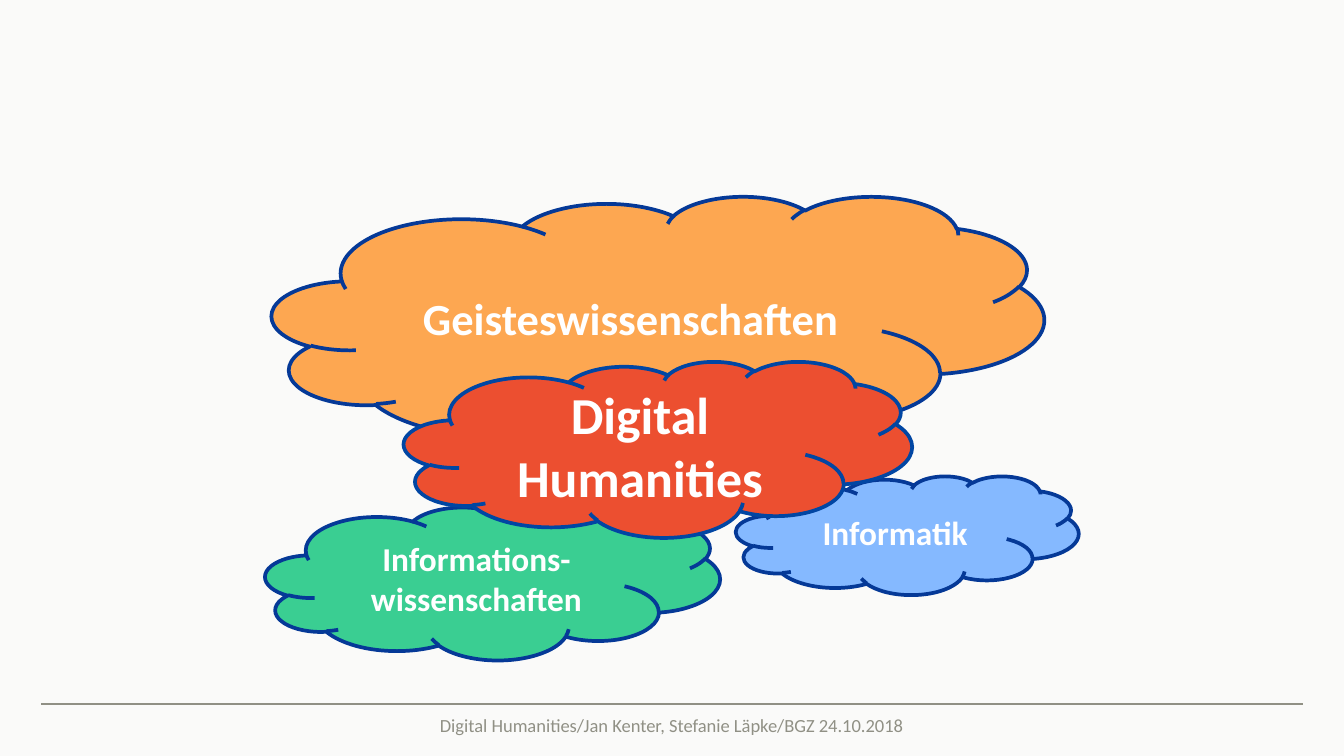
from lxml import etree
from pptx import Presentation
from pptx.dml.color import RGBColor
from pptx.enum.shapes import MSO_CONNECTOR, MSO_SHAPE
from pptx.enum.text import MSO_ANCHOR, PP_ALIGN
from pptx.oxml.ns import qn
from pptx.util import Inches, Pt

COLORS = {
    "background": "FAFAF9",
    "footer": "909085",
    "blue": "85B9FF",
    "orange": "FDA751",
    "green": "3ACE92",
    "red": "EC4F30",
    "outline": "053997",
    "center_outline": "0146A3",
    "white": "FFFFFF",
}


def rgb(name):
    return RGBColor.from_string(COLORS[name])


def write_centered(frame, text, size, color, bold):
    frame.vertical_anchor = MSO_ANCHOR.MIDDLE
    paragraph = frame.paragraphs[0]
    paragraph.text = text
    paragraph.alignment = PP_ALIGN.CENTER
    for run in paragraph.runs:
        run.font.name = "Calibri"
        run.font.size = Pt(size)
        run.font.bold = bold
        run.font.color.rgb = rgb(color)


presentation = Presentation()
presentation.slide_width = Inches(10.08)
presentation.slide_height = Inches(5.67)
slide = presentation.slides.add_slide(presentation.slide_layouts[6])
slide.background.fill.solid()
slide.background.fill.fore_color.rgb = rgb("background")

# Footer rule
footer_rule = slide.shapes.add_connector(
    MSO_CONNECTOR.STRAIGHT, Inches(0.31), Inches(5.28), Inches(9.77), Inches(5.28))
footer_rule.line.color.rgb = rgb("footer")
footer_rule.line.width = Pt(1)
etree.SubElement(footer_rule._element.spPr, qn("a:effectLst"))

# Discipline clouds, from back to front
disciplines = [
    ("Informatik", 18, "blue", "outline", (5.52, 3.57, 2.57, 0.89)),
    ("Geisteswissenschaften", 24, "orange", "outline", (2.04, 1.47, 5.79, 1.91)),
    ("Informations-\nwissenschaften", 18, "green", "outline", (1.99, 3.77, 3.41, 1.18)),
    ("Digital Humanities", 28, "red", "center_outline", (3.03, 2.71, 3.81, 1.32)),
]
for name, size, fill, outline, place in disciplines:
    cloud = slide.shapes.add_shape(MSO_SHAPE.CLOUD, *map(Inches, place))
    cloud.shadow.inherit = False
    cloud.fill.solid()
    cloud.fill.fore_color.rgb = rgb(fill)
    cloud.line.color.rgb = rgb(outline)
    cloud.line.width = Pt(2)
    cloud.text_frame.word_wrap = True
    write_centered(cloud.text_frame, name, size, "white", True)

# Footer text
footer = slide.shapes.add_textbox(
    Inches(2.28), Inches(5.28), Inches(5.51), Inches(0.31)).text_frame
footer.margin_left = footer.margin_right = footer.margin_top = footer.margin_bottom = 0
footer.word_wrap = False
write_centered(footer, "Digital Humanities/Jan Kenter, Stefanie Läpke/BGZ 24.10.2018",
               10, "footer", False)

presentation.save("out.pptx")
